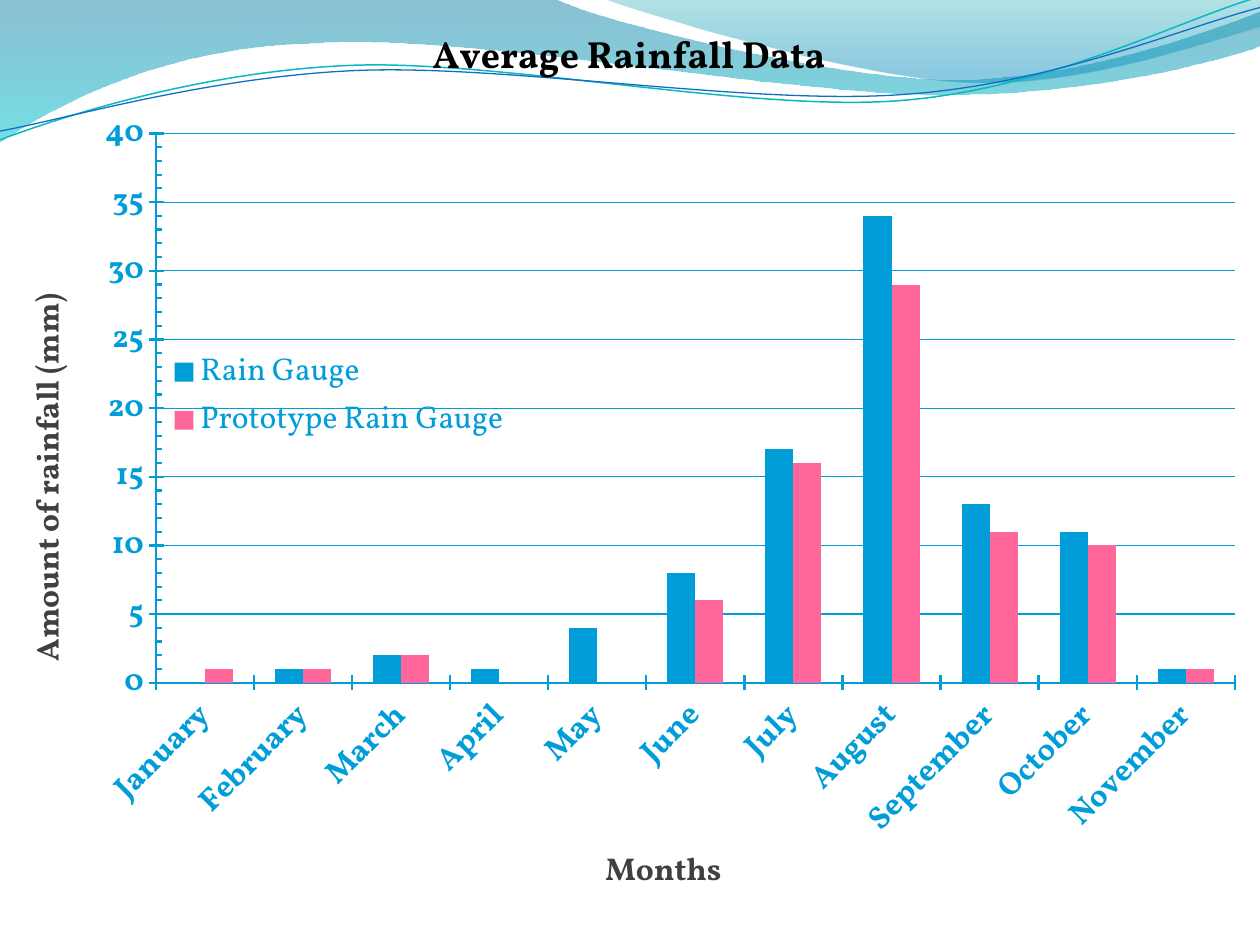
from lxml import etree
from pptx import Presentation
from pptx.chart.data import CategoryChartData
from pptx.dml.color import RGBColor
from pptx.enum.chart import XL_CHART_TYPE, XL_LEGEND_POSITION, XL_TICK_MARK
from pptx.oxml.ns import qn
from pptx.util import Inches, Pt

CLUSTERED = XL_CHART_TYPE.COLUMN_CLUSTERED
LEGEND_RIGHT = XL_LEGEND_POSITION.RIGHT
TICK_CROSS, TICK_INSIDE = XL_TICK_MARK.CROSS, XL_TICK_MARK.INSIDE
FONT = "Vollkorn"
BLACK = RGBColor(0x00, 0x00, 0x00)
GRAY = RGBColor(0x40, 0x40, 0x40)
SKY = RGBColor(0x00, 0x9D, 0xD9)
PINK = RGBColor(0xFF, 0x66, 0x99)
DEEP_BLUE = RGBColor(0x00, 0x74, 0xA1)
AQUA = RGBColor(0x00, 0xC6, 0xCF)
TEAL = RGBColor(0x00, 0xA1, 0xA9)
OCEAN = RGBColor(0x00, 0x8B, 0xBF)
LINE_TEAL = RGBColor(0x0A, 0xB8, 0xBF)
LINE_BLUE = RGBColor(0x0F, 0x6F, 0xC6)
CHART_WIDTH, CHART_HEIGHT = 10, 7.5

WAVE_BANDS = [
    ([(0, 0), (4.4, -0.01), (4.76, 0.17, 6.64, 0.63, 7.58, 0.63),
      (8.53, 0.63, 9.58, 0.26, 10, 0.09), (10.01, 0.36),
      (9.83, 0.44, 8.7, 0.76, 7.46, 0.75), (6.22, 0.75, 3.82, 0.28, 2.57, 0.34),
      (1.29, 0.36, 0.46, 0.83, -0.01, 1.13)],
     [(0, DEEP_BLUE, 45), (1, AQUA, 55)]),
    ([(4.79, -0.01), (5.09, 0.11, 6.82, 0.62, 7.69, 0.65),
      (8.56, 0.69, 9.61, 0.32, 10, 0.21), (10, 0)],
     [(0, TEAL, 30), (0.8, OCEAN, 45)]),
]
WAVE_LINES = [
    ([(0, 1.11), (0.48, 0.93, 1.58, 0.57, 2.77, 0.52),
      (3.95, 0.47, 5.93, 0.89, 7.13, 0.8), (8.33, 0.71, 9.38, 0.15, 9.98, -0.02)],
     LINE_TEAL, 0.85),
    ([(0, 1.04), (0.47, 0.96, 1.64, 0.61, 2.83, 0.56),
      (4.03, 0.51, 5.97, 0.84, 7.17, 0.75), (8.36, 0.67, 9.41, 0.21, 10, 0.06)],
     LINE_BLUE, 0.75),
]
MONTHS = ["January", "February", "March", "April", "May", "June", "July",
          "August", "September", "October", "November"]
RAINFALL = [
    ("Rain Gauge", SKY, [0, 1, 2, 1, 4, 8, 17, 34, 13, 11, 1]),
    ("Prototype Rain Gauge", PINK, [1, 1, 2, 0, None, 6, 16, 29, 11, 10, 1]),
]


def add_outline(slide, left, top, segments, close):
    """Draw straight and cubic segments from the corner of their box."""
    points = [(left + Inches(x), top + Inches(y)) for segment in segments
              for x, y in zip(segment[::2], segment[1::2])]
    builder = slide.shapes.build_freeform(*points[0])
    builder.add_line_segments(points[1:], close=close)
    outline = builder.convert_to_shape()
    outline.shadow.inherit = False
    steps = iter(list(outline._element.iter(qn("a:lnTo"))))
    for segment in segments[1:]:
        step = next(steps)
        if len(segment) == 6:
            step.tag = qn("a:cubicBezTo")
            for _ in range(2):
                following = next(steps)
                step.append(following[0])
                following.getparent().remove(following)
    return outline


def add_waves(slide, left, top):
    """Draw the translucent bands and thin lines of the header."""
    for segments, stops in WAVE_BANDS:
        band = add_outline(slide, left, top, segments, True)
        band.line.fill.background()
        band.fill.gradient()
        band.fill.gradient_angle = 270
        for stop, (position, color, opacity) in zip(band.fill.gradient_stops, stops):
            stop.position = position
            stop.color.rgb = color
            color_xml = stop._gs.find(qn("a:srgbClr"))
            etree.SubElement(color_xml, qn("a:alpha")).set("val", str(opacity * 1000))
    for segments, color, width in WAVE_LINES:
        strand = add_outline(slide, left, top, segments, False)
        strand.fill.background()
        strand.line.color.rgb = color
        strand.line.width = Pt(width)


def set_layout(element, index, x, y, w=None, h=None, inner=False):
    """Place a chart part by inches from the chart's corner."""
    for old in element.findall(qn("c:layout")):
        element.remove(old)
    layout = etree.Element(qn("c:layout"))
    manual = etree.SubElement(layout, qn("c:manualLayout"))
    settings = [("layoutTarget", "inner")] if inner else []
    settings += [("xMode", "edge"), ("yMode", "edge"),
                 ("x", x / CHART_WIDTH), ("y", y / CHART_HEIGHT)]
    if w:
        settings += [("w", w / CHART_WIDTH), ("h", h / CHART_HEIGHT)]
    for tag, value in settings:
        etree.SubElement(manual, qn(f"c:{tag}")).set("val", str(value))
    element.insert(index, layout)


def write_title(title, text, size, color, x, y):
    """Write and place a chart or axis title."""
    run = title.text_frame.paragraphs[0].add_run()
    run.text = text
    run.font.size, run.font.bold, run.font.name = Pt(size), True, FONT
    run.font.color.rgb = color
    set_layout(title._element, 1, x, y)


def style_axis(axis, title, x, y):
    """Style the title, labels and line of an axis."""
    write_title(axis.axis_title, title, 18, GRAY, x, y)
    axis.major_tick_mark = TICK_CROSS
    labels = axis.tick_labels.font
    labels.size, labels.bold, labels.name = Pt(18), True, FONT
    labels.color.rgb = SKY
    axis.format.line.color.rgb = SKY
    axis.format.line.width = Pt(1.25)


def add_rainfall_chart(slide, left, top, width, height):
    """Add the monthly rainfall columns."""
    data = CategoryChartData()
    data.categories = MONTHS
    for name, _, values in RAINFALL:
        data.add_series(name, values)
    chart = slide.shapes.add_chart(CLUSTERED, left, top, width, height, data).chart
    chart.font.size, chart.font.name = Pt(18), FONT
    chart.font.color.rgb = BLACK
    write_title(chart.chart_title, "Average Rainfall Data", 21.6, BLACK, 3.38, 0.16)

    months, amounts = chart.category_axis, chart.value_axis
    style_axis(months, "Months", 4.76, 6.67)
    style_axis(amounts, "Amount of rainfall (mm)", 0.15, 2.28)
    months._element.find(qn("c:txPr")).find(qn("a:bodyPr")).set("rot", "-2700000")
    turned = next(amounts.axis_title._element.iter(qn("a:bodyPr")))
    turned.set("rot", "-5400000")
    turned.set("vert", "horz")
    amounts.minimum_scale, amounts.maximum_scale = 0, 40
    amounts.major_unit, amounts.minor_unit = 5, 1
    amounts.minor_tick_mark = TICK_INSIDE
    amounts.major_gridlines.format.line.color.rgb = SKY
    amounts.major_gridlines.format.line.width = Pt(0.75)

    columns = chart.plots[0]
    columns.gap_width, columns.overlap = 150, 0
    columns.vary_by_categories = False
    for series, (_, color, _) in zip(columns.series, RAINFALL):
        series.format.fill.solid()
        series.format.fill.fore_color.rgb = color
        series.invert_if_negative = False

    chart.has_legend = True
    legend = chart.legend
    legend.position = LEGEND_RIGHT
    legend.include_in_layout = True
    legend.font.size, legend.font.name = Pt(18), FONT
    legend.font.color.rgb = SKY
    set_layout(legend._element, 1, 1.19, 2.75, 3, 0.79)
    plot_area = next(chart._chartSpace.iter(qn("c:plotArea")))
    set_layout(plot_area, 0, 1.24, 1.06, 8.56, 4.36, inner=True)


def main():
    """Build the rainfall slide."""
    deck = Presentation()
    deck.slide_width, deck.slide_height = Inches(CHART_WIDTH), Inches(CHART_HEIGHT)
    slide = deck.slides.add_slide(deck.slide_layouts[6])
    add_waves(slide, Inches(0), Inches(0))
    add_rainfall_chart(slide, Inches(0), Inches(0), deck.slide_width, deck.slide_height)
    deck.save("out.pptx")


if __name__ == "__main__":
    main()
